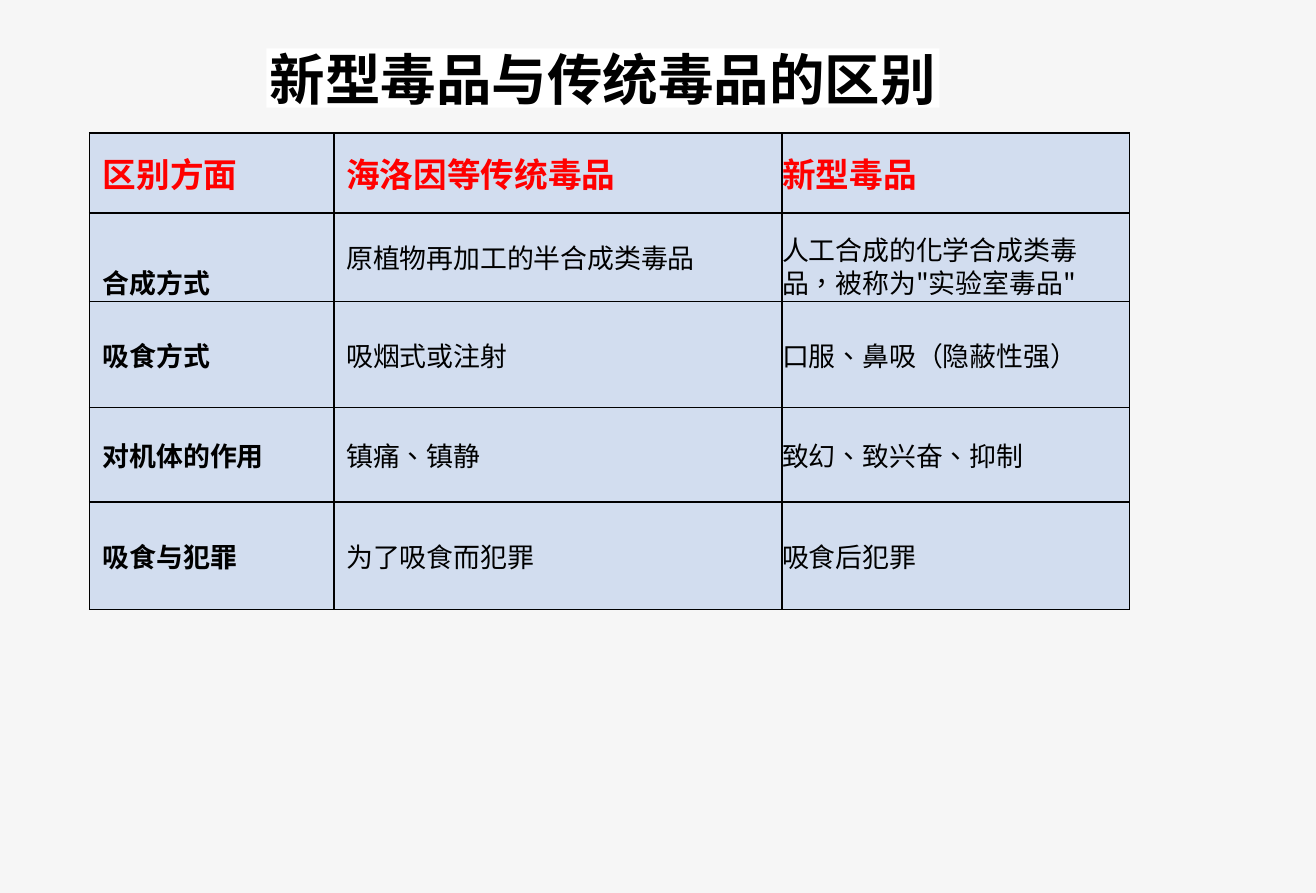
from lxml.etree import SubElement
from pptx import Presentation
from pptx.dml.color import RGBColor
from pptx.enum.lang import MSO_LANGUAGE_ID
from pptx.enum.text import MSO_ANCHOR, MSO_AUTO_SIZE, PP_ALIGN
from pptx.oxml.ns import qn
from pptx.util import Inches, Pt

BACKGROUND = RGBColor(0xF6, 0xF6, 0xF6)
WHITE = RGBColor(0xFF, 0xFF, 0xFF)
BLACK = RGBColor(0x00, 0x00, 0x00)
RED = RGBColor(0xFF, 0x00, 0x00)
PALE_BLUE = RGBColor(0xD2, 0xDD, 0xEF)
FONT = "Noto Sans CJK SC"

COLUMN_WIDTHS = (2.02, 3.7, 2.87)
COLUMN_INDENTS = (0.11, 0.1, 0)
ROW_HEIGHTS = (0.66, 0.73, 0.88, 0.78, 0.89)
ROWS = (
    ("区别方面", "海洛因等传统毒品", "新型毒品"),
    ("合成方式", "原植物再加工的半合成类毒品", '人工合成的化学合成类毒\n品，被称为"实验室毒品"'),
    ("吸食方式", "吸烟式或注射", "口服、鼻吸（隐蔽性强）"),
    ("对机体的作用", "镇痛、镇静", "致幻、致兴奋、抑制"),
    ("吸食与犯罪", "为了吸食而犯罪", "吸食后犯罪"),
)
BOTTOM_CELLS = ((1, 0), (1, 2))
TITLE_FORMAT = {"size": Pt(33), "bold": True}
HEADER_FORMAT = {"size": Pt(20), "bold": True}
LABEL_FORMAT = {"size": Pt(16), "bold": True}
BODY_FORMAT = {
    "size": Pt(16), "bold": False,
    "language_id": MSO_LANGUAGE_ID.TRADITIONAL_CHINESE,
}
NO_MARGINS = dict.fromkeys(("margin_left", "margin_right", "margin_top", "margin_bottom"), 0)


def set_attributes(target, values):
    for name, value in values.items():
        setattr(target, name, value)


def write_text(paragraph, text, color, font_format):
    for number, line in enumerate(text.splitlines()):
        if number:
            paragraph.add_line_break()
        run = paragraph.add_run()
        run.text = line
        set_attributes(run.font, {"name": FONT, **font_format})
        run.font.color.rgb = color
        SubElement(run.font._element, qn("a:ea"), typeface=FONT)


def add_borders(cell):
    properties = cell._tc.get_or_add_tcPr()
    for position, side in enumerate(("lnL", "lnR", "lnT", "lnB")):
        line = properties.makeelement(qn(f"a:{side}"), {"w": str(Pt(1))})
        fill = SubElement(line, qn("a:solidFill"))
        SubElement(fill, qn("a:srgbClr"), val=str(BLACK))
        properties.insert(position, line)


def add_title(slide, left, top, width, height):
    title = slide.shapes.title
    set_attributes(title, {
        "left": Inches(left), "top": Inches(top),
        "width": Inches(width), "height": Inches(height),
    })
    title.fill.solid()
    title.fill.fore_color.rgb = WHITE
    set_attributes(title.text_frame, {
        **NO_MARGINS, "word_wrap": False, "auto_size": MSO_AUTO_SIZE.NONE,
        "vertical_anchor": MSO_ANCHOR.MIDDLE,
    })
    paragraph = title.text_frame.paragraphs[0]
    paragraph.alignment = PP_ALIGN.CENTER
    write_text(paragraph, "新型毒品与传统毒品的区别", BLACK, TITLE_FORMAT)


def fill_cell(cell, row, column):
    anchor = MSO_ANCHOR.BOTTOM if (row, column) in BOTTOM_CELLS else MSO_ANCHOR.MIDDLE
    set_attributes(cell, {
        **NO_MARGINS, "margin_left": Inches(COLUMN_INDENTS[column]),
        "vertical_anchor": anchor,
    })
    cell.fill.solid()
    cell.fill.fore_color.rgb = PALE_BLUE
    add_borders(cell)
    paragraph = cell.text_frame.paragraphs[0]
    if (row, column) == (1, 2):
        paragraph.line_spacing = Pt(19.7)
    font_format = HEADER_FORMAT if row == 0 else BODY_FORMAT if column else LABEL_FORMAT
    write_text(paragraph, ROWS[row][column], BLACK if row else RED, font_format)


def add_comparison_table(slide, left, top):
    table = slide.shapes.add_table(
        len(ROWS), len(COLUMN_WIDTHS), Inches(left), Inches(top),
        Inches(sum(COLUMN_WIDTHS)), Inches(sum(ROW_HEIGHTS)),
    ).table
    table.horz_banding = False
    for column, width in zip(table.columns, COLUMN_WIDTHS):
        column.width = Inches(width)
    for row, height in zip(table.rows, ROW_HEIGHTS):
        row.height = Inches(height)
    for row in range(len(ROWS)):
        for column in range(len(COLUMN_WIDTHS)):
            fill_cell(table.cell(row, column), row, column)


def main():
    presentation = Presentation()
    presentation.slide_width = Inches(10.87)
    presentation.slide_height = Inches(7.38)
    slide = presentation.slides.add_slide(presentation.slide_layouts[5])
    slide.background.fill.solid()
    slide.background.fill.fore_color.rgb = BACKGROUND
    add_title(slide, 2.2, 0.4, 5.56, 0.49)
    add_comparison_table(slide, 0.74, 1.1)
    presentation.save("out.pptx")


if __name__ == "__main__":
    main()
